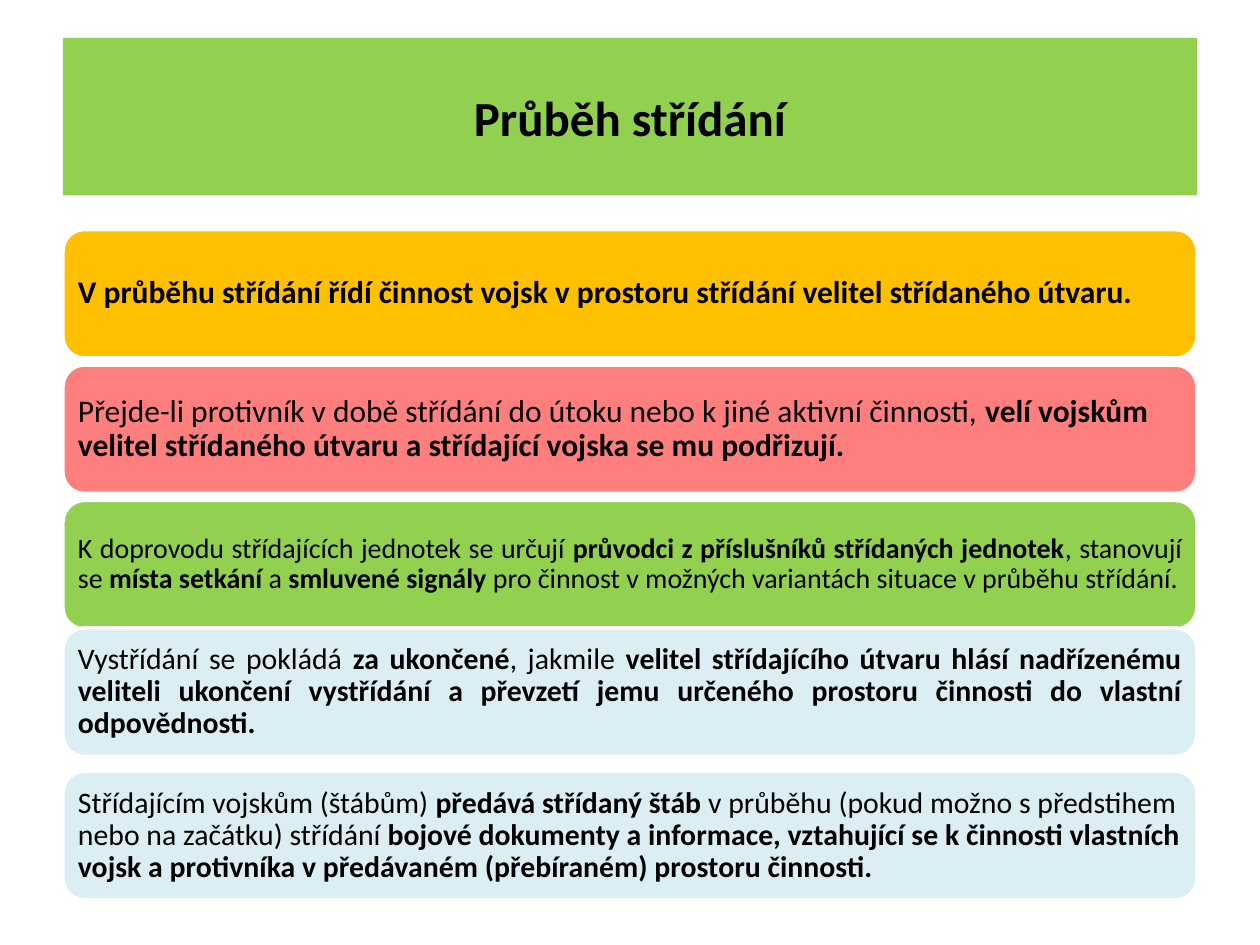
from dataclasses import dataclass

from lxml import etree
from pptx import Presentation
from pptx.dml.color import RGBColor
from pptx.enum.shapes import MSO_SHAPE
from pptx.enum.text import MSO_ANCHOR, PP_ALIGN
from pptx.oxml.ns import qn
from pptx.util import Pt

RECTANGLE = MSO_SHAPE.RECTANGLE
ROUNDED = MSO_SHAPE.ROUNDED_RECTANGLE
LEFT, CENTER, JUSTIFY = PP_ALIGN.LEFT, PP_ALIGN.CENTER, PP_ALIGN.JUSTIFY
MIDDLE = MSO_ANCHOR.MIDDLE

BLACK = RGBColor(0x00, 0x00, 0x00)
WHITE = RGBColor(0xFF, 0xFF, 0xFF)
GREEN = RGBColor(0x92, 0xD0, 0x50)
AMBER = RGBColor(0xFF, 0xC0, 0x00)
RED = RGBColor(0xFF, 0x00, 0x00)
PALE_BLUE = RGBColor(0xDB, 0xEE, 0xF4)

FONT = "Calibri"
MARGIN = 36
WIDTH = 648
CARD_HEIGHT = 73.4
FIRST_TOP = 131.2
CARD_PITCH = 77.4


@dataclass(frozen=True)
class TextRun:
    text: str
    bold: bool = False


@dataclass(frozen=True)
class Card:
    top: float
    fill: RGBColor
    size: float
    runs: tuple[TextRun, ...]
    align: PP_ALIGN = LEFT
    opacity: int = 100


CARDS = (
    Card(FIRST_TOP, AMBER, 18, (
        TextRun("V průběhu střídání řídí činnost vojsk v prostoru střídání "
                "velitel střídaného útvaru.", True),
    )),
    Card(FIRST_TOP + CARD_PITCH, RED, 18, (
        TextRun("Přejde-li protivník v době střídání do útoku nebo k jiné "
                "aktivní činnosti, "),
        TextRun("velí vojskům velitel střídaného útvaru a střídající vojska "
                "se mu podřizují.", True),
    ), opacity=50),
    Card(FIRST_TOP + 2 * CARD_PITCH, GREEN, 16, (
        TextRun("K doprovodu střídajících jednotek se určují "),
        TextRun("průvodci z příslušníků střídaných jednotek", True),
        TextRun(", stanovují se "),
        TextRun("místa setkání ", True),
        TextRun("a "),
        TextRun("smluvené signály ", True),
        TextRun("pro činnost v možných variantách situace v průběhu střídání."),
    ), JUSTIFY),
    Card(358.8, PALE_BLUE, 17, (
        TextRun("Vystřídání se pokládá "),
        TextRun("za ukončené", True),
        TextRun(", jakmile "),
        TextRun("velitel střídajícího útvaru hlásí nadřízenému veliteli "
                "ukončení vystřídání a převzetí jemu určeného prostoru "
                "činnosti do vlastní odpovědnosti.", True),
    ), JUSTIFY),
    Card(440.8, PALE_BLUE, 17, (
        TextRun("Střídajícím vojskům (štábům) "),
        TextRun("předává střídaný štáb ", True),
        TextRun("v průběhu (pokud možno s předstihem nebo na začátku) střídání "),
        TextRun("bojové dokumenty a informace, vztahující se k činnosti "
                "vlastních vojsk a protivníka v předávaném (přebíraném) "
                "prostoru činnosti.", True),
    )),
)


def add_box(slide, kind: MSO_SHAPE, top: float, height: float, fill: RGBColor):
    shape = slide.shapes.add_shape(kind, Pt(MARGIN), Pt(top), Pt(WIDTH), Pt(height))
    shape.shadow.inherit = False
    shape.fill.solid()
    shape.fill.fore_color.rgb = fill
    shape.line.fill.background()
    return shape


def write_text(shape, runs: tuple[TextRun, ...], size: float, align: PP_ALIGN):
    frame = shape.text_frame
    frame.word_wrap = True
    frame.vertical_anchor = MIDDLE
    paragraph = frame.paragraphs[0]
    paragraph.alignment = align
    for item in runs:
        run = paragraph.add_run()
        run.text = item.text
        run.font.name = FONT
        run.font.size = Pt(size)
        run.font.bold = item.bold
        run.font.color.rgb = BLACK
    return paragraph


def set_opacity(shape, percent: int) -> None:
    color = shape.fill._xPr.find(qn("a:solidFill"))[0]
    etree.SubElement(color, qn("a:alpha")).set("val", str(percent * 1000))


def add_card(slide, card: Card) -> None:
    shape = add_box(slide, ROUNDED, card.top, CARD_HEIGHT, card.fill)
    shape.line.color.rgb = WHITE
    shape.line.width = Pt(2)
    if card.opacity < 100:
        set_opacity(shape, card.opacity)
    frame = shape.text_frame
    frame.margin_left = frame.margin_right = Pt(5)
    frame.margin_top = frame.margin_bottom = Pt(5)
    paragraph = write_text(shape, card.runs, card.size, card.align)
    paragraph.line_spacing = 0.9


def main() -> None:
    presentation = Presentation()
    presentation.slide_width = Pt(720)
    presentation.slide_height = Pt(540)
    slide = presentation.slides.add_slide(presentation.slide_layouts[6])

    # Title band
    title = add_box(slide, RECTANGLE, 21.6, 90, GREEN)
    write_text(title, (TextRun("Průběh střídání", True),), 28, CENTER)

    # Rules of the relief, one card each
    for card in CARDS:
        add_card(slide, card)

    presentation.save("out.pptx")


if __name__ == "__main__":
    main()
